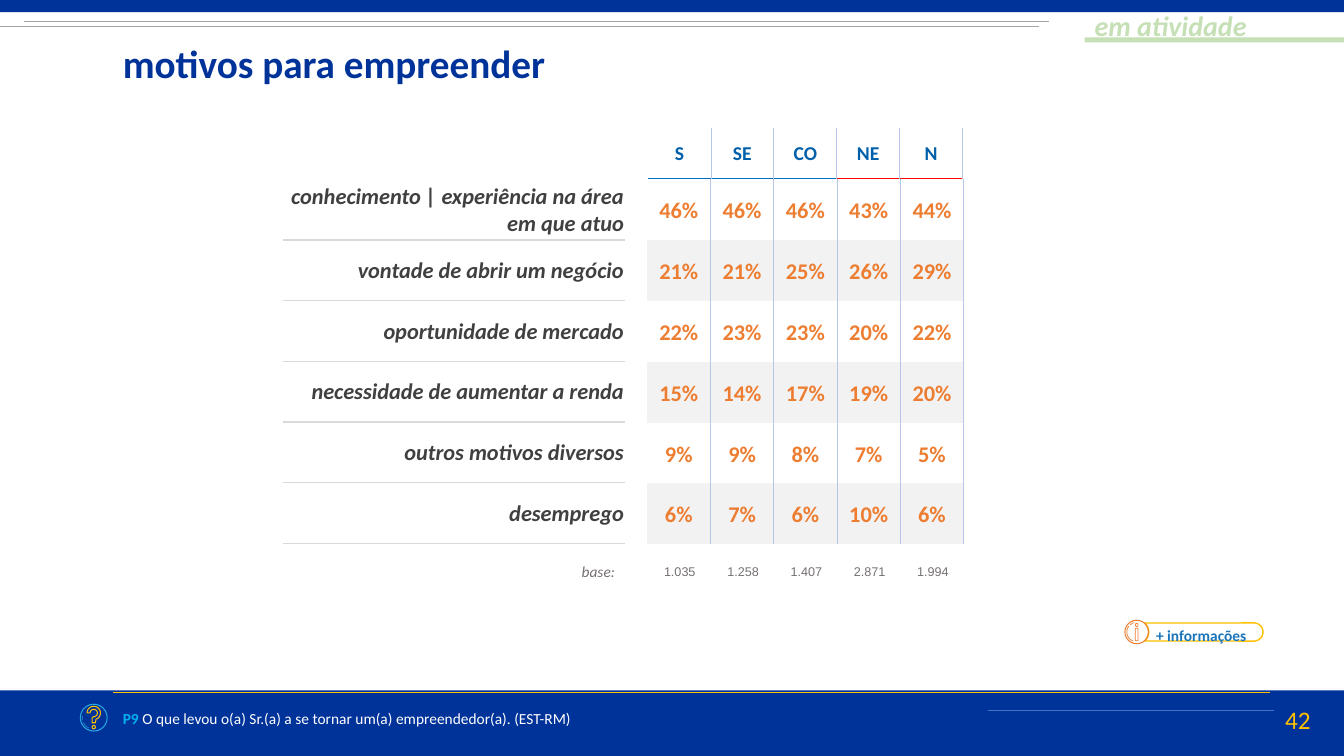
from math import cos, radians, sin

from lxml.etree import SubElement
from pptx import Presentation
from pptx.dml.color import RGBColor
from pptx.enum.shapes import MSO_CONNECTOR, MSO_SHAPE
from pptx.enum.text import MSO_ANCHOR, PP_ALIGN
from pptx.oxml.ns import qn
from pptx.util import Emu, Inches, Pt

COLUMNS, ROWS = 40, 22.5
NAVY, GOLD, ORANGE = "003399", "FFC000", "ED7D31"
BLUE, GREEN, GRAY = "1B75BB", "C5E0B4", "767171"
PLAIN_TABLE = "{2D5ABB26-0587-4C30-8999-92F81FD0307C}"


def color(code):
    return RGBColor.from_string(code)


def arc(x, y, radius, start, end, steps=16):
    """Points on a circle; angles in degrees, clockwise from the right."""
    angles = [radians(start + (end - start) * i / steps) for i in range(steps + 1)]
    return [(x + radius * cos(a), y + radius * sin(a)) for a in angles]


class SlideBuilder:
    """Places elements on a grid of 40 columns by 22.5 rows."""

    def __init__(self, presentation, font="Calibri"):
        self.unit = presentation.slide_height / ROWS
        self.font = font
        self.slide = presentation.slides.add_slide(presentation.slide_layouts[6])
        self.shapes = self.slide.shapes

    def grid(self, *values):
        return [Emu(round(value * self.unit)) for value in values]

    def paint(self, shape, fill=None, line=None, width=0.75):
        shape.shadow.inherit = False
        if fill:
            shape.fill.solid()
            shape.fill.fore_color.rgb = color(fill)
        else:
            shape.fill.background()
        if line:
            shape.line.color.rgb = color(line)
            shape.line.width = Pt(width)
        else:
            shape.line.fill.background()

    def shape(self, kind, box, **style):
        self.paint(self.shapes.add_shape(kind, *self.grid(*box)), **style)

    def outline(self, points, closed=True, **style):
        points = [self.grid(*point) for point in points]
        builder = self.shapes.build_freeform(*points[0])
        builder.add_line_segments(points[1:], close=closed)
        self.paint(builder.convert_to_shape(), **style)

    def line(self, start, end, stroke, width=0.5):
        connector = self.shapes.add_connector(
            MSO_CONNECTOR.STRAIGHT, *self.grid(*start, *end))
        connector.line.color.rgb = color(stroke)
        connector.line.width = Pt(width)
        SubElement(connector._element.spPr, qn("a:effectLst"))

    def add_run(self, paragraph, text, size, ink, bold=False, italic=False, font=None):
        run = paragraph.add_run()
        run.text = text
        run.font.name = font or self.font
        run.font.size = Pt(size)
        run.font.color.rgb = color(ink)
        run.font.bold = bold
        run.font.italic = italic

    def text(self, box, *runs, align=PP_ALIGN.LEFT, anchor=MSO_ANCHOR.TOP,
             wrap=True, spacing=1.0):
        frame = self.shapes.add_textbox(*self.grid(*box)).text_frame
        frame.word_wrap = wrap
        frame.vertical_anchor = anchor
        paragraph = frame.paragraphs[0]
        paragraph.alignment = align
        paragraph.line_spacing = spacing
        for run in runs:
            self.add_run(paragraph, **run)

    def border(self, cell, edge, stroke, width):
        line = SubElement(cell._tc.get_or_add_tcPr(), qn("a:ln" + edge),
                          w=str(Pt(width)))
        fill = SubElement(line, qn("a:solidFill"))
        SubElement(fill, qn("a:srgbClr"), val=stroke)

    def table(self, box, values, style, align=PP_ALIGN.CENTER,
              borders=None, band=None, spacing=None, after=None):
        frame = self.shapes.add_table(len(values), len(values[0]), *self.grid(*box))
        table = frame.table
        table.first_row = table.horz_banding = False
        table._tbl.tblPr.find(qn("a:tableStyleId")).text = PLAIN_TABLE
        for i, row in enumerate(values):
            for j, value in enumerate(row):
                cell = table.cell(i, j)
                cell.vertical_anchor = MSO_ANCHOR.MIDDLE
                cell.margin_left = cell.margin_right = cell.margin_top = Inches(0.01)
                cell.margin_bottom = 0
                for edge in (borders(i, j) if borders else []):
                    self.border(cell, *edge)
                if band and i % 2:
                    cell.fill.solid()
                    cell.fill.fore_color.rgb = color(band)
                else:
                    cell.fill.background()
                paragraph = cell.text_frame.paragraphs[0]
                paragraph.alignment = align
                if spacing:
                    paragraph.line_spacing = spacing
                    paragraph.space_after = Pt(after)
                self.add_run(paragraph, value, **style)


REGIONS = ["S", "SE", "CO", "NE", "N"]
BASES = ["1.035", "1.258", "1.407", "2.871", "1.994"]
REASONS = {
    "conhecimento | experiência na área em que atuo": (46, 46, 46, 43, 44),
    "vontade de abrir um negócio": (21, 21, 25, 26, 29),
    "oportunidade de mercado": (22, 23, 23, 20, 22),
    "necessidade de aumentar a renda": (15, 14, 17, 19, 20),
    "outros motivos diversos": (9, 9, 8, 7, 5),
    "desemprego": (6, 7, 6, 10, 6),
}


def side_borders(row, column):
    left = [("L", "B4C7E7", 0.75)] if column else []
    return left + [("R", "B4C7E7", 0.75)]


def header_borders(row, column):
    bottom = ("B", "0070C0", 1.5) if column < 3 else ("B", "FF0000", 1)
    return side_borders(row, column) + [bottom]


def label_borders(row, column):
    top = [("T", "D9D9D9", 1)] if row else []
    return top + [("B", "D9D9D9", 1)]


def main():
    presentation = Presentation()
    presentation.slide_width = Emu(Inches(7.5) * 16 // 9)
    presentation.slide_height = Inches(7.5)
    page = SlideBuilder(presentation)

    # Bands and rules
    page.shape(MSO_SHAPE.RECTANGLE, (0, 0, COLUMNS, 0.36), fill=NAVY)
    page.shape(MSO_SHAPE.RECTANGLE, (0, 20.55, COLUMNS, 1.95), fill=NAVY)
    page.line((3.36, 20.61), (37.8, 20.61), GOLD)
    page.line((29.4, 21.15), (37.92, 21.15), "4472C4")
    page.line((0, 0.78), (30.93, 0.78), "A6A6A6")
    page.line((0.72, 0.63), (31.23, 0.63), "A6A6A6")

    # Section tag and title
    page.shape(MSO_SHAPE.RECTANGLE, (32.28, 1.11, 7.72, 0.15), fill=GREEN)
    page.text((32.28, 0.12, 5.16, 1.32),
              dict(text="em atividade", size=20, ink=GREEN, bold=True, italic=True),
              wrap=False)
    page.text((3.36, 1.02, 19.26, 1.71),
              dict(text="motivos para empreender", size=28, ink=NAVY, bold=True))

    # Percentages by region
    page.table((19.26, 5.34, 9.42, 10.86),
               [[f"{share}%" for share in shares] for shares in REASONS.values()],
               dict(size=16, ink=ORANGE, bold=True), borders=side_borders,
               band="F2F2F2", spacing=1.07, after=8)
    page.table((19.29, 3.81, 9.36, 1.5), [REGIONS],
               dict(size=14, ink="0060AA", bold=True), borders=header_borders)
    page.table((8.43, 5.34, 10.17, 10.83), [[reason] for reason in REASONS],
               dict(size=16, ink="404040", bold=True, italic=True),
               align=PP_ALIGN.RIGHT, borders=label_borders)

    # Sample sizes
    page.text((15.27, 16.59, 3.33, 0.87),
              dict(text="base:", size=11, ink=GRAY, italic=True), align=PP_ALIGN.RIGHT)
    page.table((19.29, 16.44, 9.42, 1.14), [BASES],
               dict(size=9, ink=GRAY, font="Arial"))

    # More information button
    info_x, info_y = 33.83, 18.81
    page.outline(arc(37.32, info_y, 0.27, -90, 90)
                 + arc(info_x, info_y, 0.36, 48, -48), line=GOLD, width=1)
    page.text((34.11, 18.21, 3.96, 1.14),
              dict(text="+ informações", size=11, ink=BLUE, bold=True), spacing=1.5)
    page.shape(MSO_SHAPE.OVAL, (info_x - 0.35, info_y - 0.35, 0.7, 0.7), line=ORANGE)
    page.shape(MSO_SHAPE.ROUNDED_RECTANGLE, (33.79, 18.7, 0.08, 0.37),
               line=ORANGE, width=0.5)
    page.shape(MSO_SHAPE.OVAL, (33.79, 18.55, 0.08, 0.1), line=ORANGE, width=0.5)
    for start, end in ((110, 218), (228, 255)):
        page.outline(arc(info_x, info_y, 0.29, start, end), closed=False,
                     line=ORANGE, width=0.5)

    # Question icon
    icon_x, icon_y = 2.79, 21.36
    page.shape(MSO_SHAPE.OVAL, (icon_x - 0.4, icon_y - 0.4, 0.8, 0.8), line="26A9E0")
    page.outline(arc(icon_x, 21.22, 0.2, -180, 70)
                 + [(2.84, 21.51), (2.74, 21.51), (2.74, 21.36)]
                 + arc(icon_x, 21.22, 0.11, 90, -180), line=GOLD)
    page.shape(MSO_SHAPE.OVAL, (2.74, 21.59, 0.1, 0.1), line=GOLD)
    for start, end in ((155, 115), (190, 167)):
        page.outline(arc(icon_x, icon_y, 0.34, start, end), closed=False, line=BLUE)

    # Footer question and page number
    page.text((3.36, 21, 25.92, 0.78),
              dict(text="P9 ", size=11, ink="00B0F0", bold=True),
              dict(text="O que levou o(a) Sr.(a) a se tornar um(a) empreendedor(a). "
                        "(EST-RM)", size=11, ink="FFFFFF"),
              anchor=MSO_ANCHOR.MIDDLE)
    page.text((36.54, 20.82, 2.76, 1.2), dict(text="42", size=18, ink=GOLD),
              align=PP_ALIGN.RIGHT, anchor=MSO_ANCHOR.MIDDLE)

    presentation.save("out.pptx")


if __name__ == "__main__":
    main()
